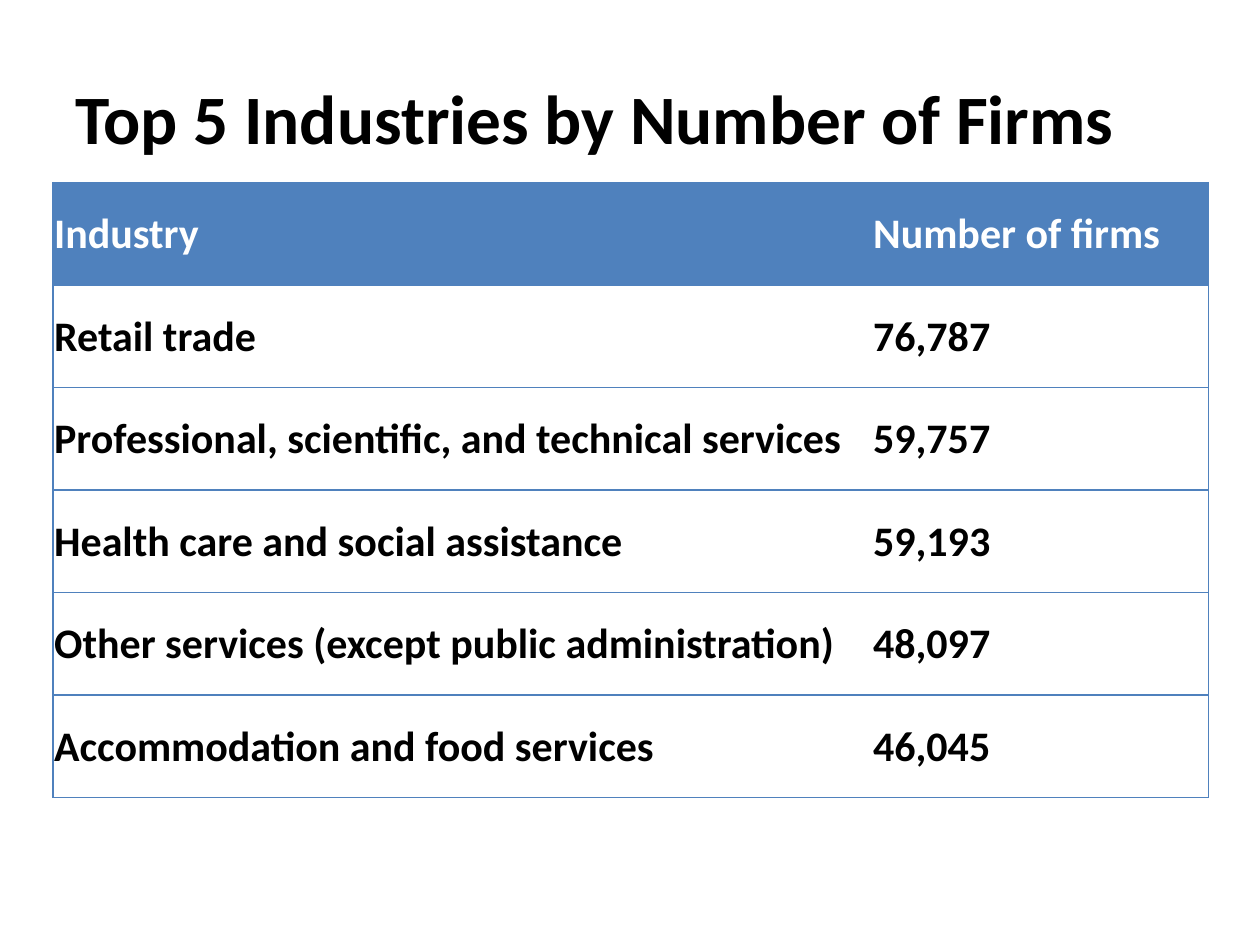
from dataclasses import dataclass

from lxml import etree
from pptx import Presentation
from pptx.dml.color import RGBColor
from pptx.enum import text
from pptx.oxml import ns
from pptx.util import Inches, Pt


@dataclass(frozen=True)
class Theme:
    font: str = "Calibri"
    blue: str = "4F81BD"
    white: str = "FFFFFF"
    black: str = "000000"
    title_size: float = 39.6
    table_size: float = 24
    border_width: float = 1


theme = Theme()


def write(tf, content, size=theme.table_size, color=theme.black, bold=True):
    p = tf.paragraphs[0]
    p.alignment = text.PP_ALIGN.LEFT
    r = p.add_run()
    r.text = content
    r.font.name = theme.font
    r.font.size = Pt(size)
    r.font.bold = bold
    r.font.color.rgb = RGBColor.from_string(color)


def set_borders(cell, visible):
    """Draw the named sides of a cell and hide the others."""
    tc_pr = cell._tc.get_or_add_tcPr()
    for i, side in enumerate("LRTB"):  # the schema wants borders before the fill
        ln = etree.Element(ns.qn(f"a:ln{side}"), w=str(Pt(theme.border_width)))
        if side in visible:
            fill = etree.SubElement(ln, ns.qn("a:solidFill"))
            etree.SubElement(fill, ns.qn("a:srgbClr"), val=theme.blue)
        else:
            etree.SubElement(ln, ns.qn("a:noFill"))
        tc_pr.insert(i, ln)


prs = Presentation()
prs.slide_width, prs.slide_height = Inches(10), Inches(7.5)
s = prs.slides.add_slide(prs.slide_layouts[6])

title = s.shapes.add_textbox(Inches(0.5), Inches(0.3), Inches(9), Inches(1.25))
tf = title.text_frame
tf.word_wrap = True
tf.vertical_anchor = text.MSO_ANCHOR.MIDDLE
write(tf, "Top 5 Industries by Number of Firms", size=theme.title_size)

rows = [
    ("Industry", "Number of firms"),
    ("Retail trade", "76,787"),
    ("Professional, scientific, and technical services", "59,757"),
    ("Health care and social assistance", "59,193"),
    ("Other services (except public administration)", "48,097"),
    ("Accommodation and food services", "46,045"),
]
col_widths = [6.5, 2.67]
table = s.shapes.add_table(
    len(rows), len(col_widths),
    Inches(0.42), Inches(1.45), Inches(sum(col_widths)), Inches(4.88),
).table
table.horz_banding = False
for col, width in zip(table.columns, col_widths):
    col.width = Inches(width)

for i, row in enumerate(rows):
    is_header = i == 0
    for j, content in enumerate(row):
        cell = table.cell(i, j)
        cell.margin_left = cell.margin_right = cell.margin_top = Inches(0.01)
        cell.margin_bottom = 0
        cell.vertical_anchor = text.MSO_ANCHOR.MIDDLE
        cell.fill.solid()
        cell.fill.fore_color.rgb = RGBColor.from_string(theme.blue if is_header else theme.white)
        write(cell.text_frame, content, color=theme.white if is_header else theme.black)
        set_borders(cell, "LTB" if j == 0 else "RTB")

prs.save("out.pptx")
